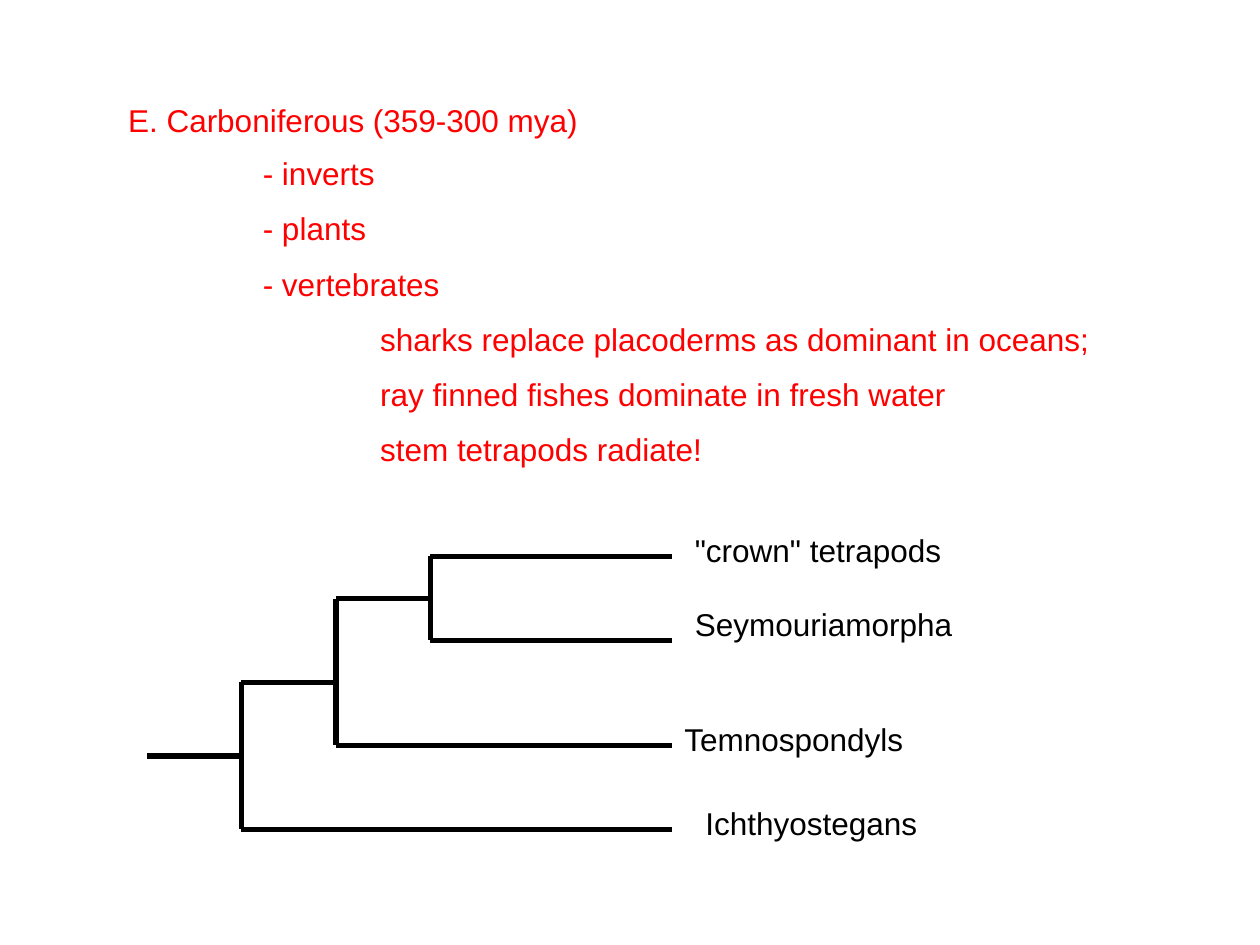
from dataclasses import dataclass

import pptx
import pptx.dml.color
import pptx.enum.shapes
import pptx.enum.text
import pptx.oxml
import pptx.oxml.ns
import pptx.util

Pt = pptx.util.Pt


@dataclass(frozen=True)
class Theme:
    font: str = "Arial"
    size: float = 18
    line_width: float = 3
    outline: str = "FF0000"
    tree: str = "000000"


@dataclass(frozen=True)
class Item:
    text: str
    indent: float


@dataclass(frozen=True)
class Fork:
    x: float
    top: float
    bottom: float
    stem: float


@dataclass(frozen=True)
class Taxon:
    name: str
    left: float
    top: float
    width: float


THEME = Theme()
STEM_LENGTH = 54
TIP_X = 384
DASH_INDENT, DETAIL_INDENT = 77, 144

TITLE = "E. Carboniferous (359-300 mya)"
ITEMS = [
    Item("- inverts", DASH_INDENT),
    Item("- plants", DASH_INDENT),
    Item("- vertebrates", DASH_INDENT),
    Item("sharks replace placoderms as dominant in oceans;", DETAIL_INDENT),
    Item("ray finned fishes dominate in fresh water", DETAIL_INDENT),
    Item("stem tetrapods radiate!", DETAIL_INDENT),
]
FORKS = [
    Fork(138, 390, 474, 432),
    Fork(192, 342, 426, 390),
    Fork(246, 318, 366, 342),
]
TAXA = [
    Taxon('"crown" tetrapods', 390, 300, 210),
    Taxon("Seymouriamorpha", 390, 342, 174),
    Taxon("Temnospondyls", 384, 408, 186),
    Taxon("Ichthyostegans", 396, 456, 210),
]


def write_paragraph(para, text: str, *, color: str, indent: float = 0, after: float = 0) -> None:
    para.alignment = pptx.enum.text.PP_ALIGN.LEFT
    para.space_before = Pt(0)
    para.space_after = Pt(after)
    properties = para._p.get_or_add_pPr()
    properties.set("marL", str(Pt(indent)))
    properties.set("indent", "0")
    pptx.oxml.ns.qn("a:buNone")
    properties.append(properties.makeelement(pptx.oxml.ns.qn("a:buNone"), {}))
    span = para.add_run()
    span.text = text
    span.font.name = THEME.font
    span.font.size = Pt(THEME.size)
    span.font.color.rgb = pptx.dml.color.RGBColor.from_string(color)


def place_text(box, left: float, top: float, width: float, height: float):
    box.left, box.top, box.width, box.height = map(Pt, (left, top, width, height))
    frame = box.text_frame
    frame.word_wrap = True
    frame.auto_size = pptx.enum.text.MSO_AUTO_SIZE.NONE
    frame.vertical_anchor = pptx.enum.text.MSO_ANCHOR.TOP
    return frame


def draw_line(page, x1: float, y1: float, x2: float, y2: float) -> None:
    line = page.shapes.add_connector(
        pptx.enum.shapes.MSO_CONNECTOR.STRAIGHT, Pt(x1), Pt(y1), Pt(x2), Pt(y2)
    )
    line.line.color.rgb = pptx.dml.color.RGBColor.from_string(THEME.tree)
    line.line.width = Pt(THEME.line_width)
    properties = line._element.spPr
    properties.append(properties.makeelement(pptx.oxml.ns.qn("a:effectLst"), {}))


def draw_fork(page, fork: Fork) -> None:
    draw_line(page, fork.x - STEM_LENGTH, fork.stem, fork.x, fork.stem)
    draw_line(page, fork.x, fork.top, fork.x, fork.bottom)
    draw_line(page, fork.x, fork.bottom, TIP_X, fork.bottom)


def draw_taxon(page, taxon: Taxon) -> None:
    box = page.shapes.add_textbox(0, 0, 0, 0)
    frame = place_text(box, taxon.left, taxon.top, taxon.width, 28.8)
    write_paragraph(frame.paragraphs[0], taxon.name, color=THEME.tree)


def write_outline(page) -> None:
    title = place_text(page.shapes.title, 66, 54, 576, 30)
    write_paragraph(title.paragraphs[0], TITLE, color=THEME.outline)
    body = place_text(page.placeholders[1], 66, 84.6, 576, 190)
    for index, item in enumerate(ITEMS):
        para = body.add_paragraph() if index else body.paragraphs[0]
        write_paragraph(para, item.text, color=THEME.outline, indent=item.indent, after=9.9)


def main() -> None:
    deck = pptx.Presentation()
    deck.slide_width, deck.slide_height = Pt(720), Pt(540)
    page = deck.slides.add_slide(deck.slide_layouts[1])
    write_outline(page)
    for fork in FORKS:
        draw_fork(page, fork)
    crown = FORKS[-1]
    draw_line(page, crown.x, crown.top, TIP_X, crown.top)
    for taxon in TAXA:
        draw_taxon(page, taxon)
    deck.save("out.pptx")


if __name__ == "__main__":
    main()
